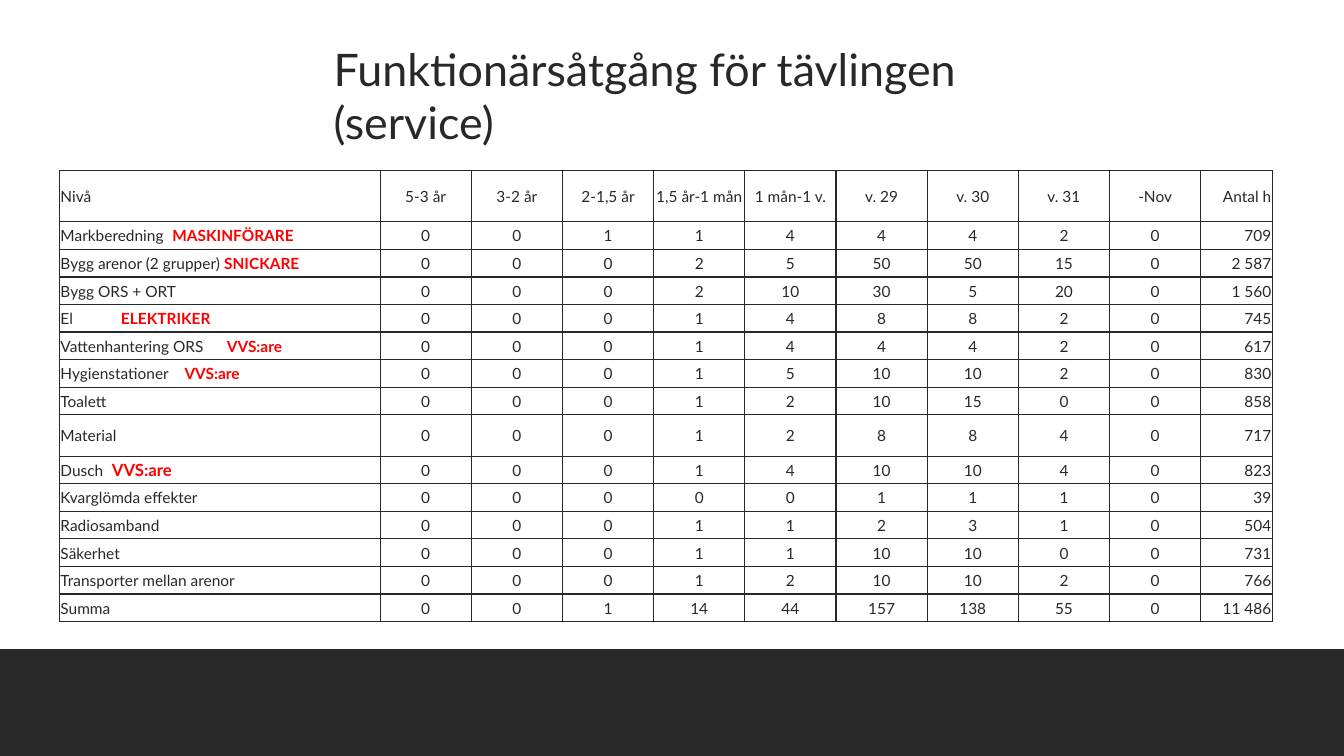
from lxml import etree
from pptx import Presentation
from pptx.dml.color import RGBColor
from pptx.enum.shapes import MSO_SHAPE
from pptx.enum.text import MSO_ANCHOR, PP_ALIGN
from pptx.oxml import parse_xml
from pptx.oxml.ns import nsdecls, qn
from pptx.util import Inches, Pt

RECTANGLE = MSO_SHAPE.RECTANGLE
TOP, MIDDLE = MSO_ANCHOR.TOP, MSO_ANCHOR.MIDDLE
LEFT, CENTER, RIGHT = PP_ALIGN.LEFT, PP_ALIGN.CENTER, PP_ALIGN.RIGHT

SLIDE_W, SLIDE_H = 13.33, 7.5
COLORS = {"ink": "282828", "trade": "FF0000"}
FONT = "Lato"

HEADER = ["Nivå", "5-3 år", "3-2 år", "2-1,5 år", "1,5 år-1 mån", "1 mån-1 v.",
          "v. 29", "v. 30", "v. 31", "-Nov", "Antal h"]
TASKS = [
    ["Markberedning", 0, 0, 1, 1, 4, 4, 4, 2, 0, "709"],
    ["Bygg arenor (2 grupper)", 0, 0, 0, 2, 5, 50, 50, 15, 0, "2 587"],
    ["Bygg ORS + ORT", 0, 0, 0, 2, 10, 30, 5, 20, 0, "1 560"],
    ["El", 0, 0, 0, 1, 4, 8, 8, 2, 0, "745"],
    ["Vattenhantering ORS", 0, 0, 0, 1, 4, 4, 4, 2, 0, "617"],
    ["Hygienstationer", 0, 0, 0, 1, 5, 10, 10, 2, 0, "830"],
    ["Toalett", 0, 0, 0, 1, 2, 10, 15, 0, 0, "858"],
    ["Material", 0, 0, 0, 1, 2, 8, 8, 4, 0, "717"],
    ["Dusch", 0, 0, 0, 1, 4, 10, 10, 4, 0, "823"],
    ["Kvarglömda effekter", 0, 0, 0, 0, 0, 1, 1, 1, 0, "39"],
    ["Radiosamband", 0, 0, 0, 1, 1, 2, 3, 1, 0, "504"],
    ["Säkerhet", 0, 0, 0, 1, 1, 10, 10, 0, 0, "731"],
    ["Transporter mellan arenor", 0, 0, 0, 1, 2, 10, 10, 2, 0, "766"],
    ["Summa", 0, 0, 1, 14, 44, 157, 138, 55, 0, "11 486"],
]
# Task: (trade needed, tab position in inches or None for a space, text size)
TRADES = {
    "Markberedning": ("MASKINFÖRARE", 1.11, 11),
    "Bygg arenor (2 grupper)": ("SNICKARE", None, 11),
    "El": ("ELEKTRIKER", 0.6, 11),
    "Vattenhantering ORS": ("VVS:are", 1.65, 11),
    "Hygienstationer": ("VVS:are", 1.23, 11),
    "Dusch": ("VVS:are", 0.51, 12),
}


def add_text(paragraph, text, size=11, color="ink", bold=False, align=LEFT):
    paragraph.alignment = align
    run = paragraph.add_run()
    run.text = text
    run.font.name = FONT
    run.font.size = Pt(size)
    run.font.bold = bold
    run.font.color.rgb = RGBColor.from_string(COLORS[color])


def add_tab_stop(paragraph, position):
    tabs = etree.SubElement(paragraph._p.get_or_add_pPr(), qn("a:tabLst"))
    etree.SubElement(tabs, qn("a:tab"), pos=str(Inches(position)), algn="l")


def style_cell(cell):
    cell.vertical_anchor = MIDDLE
    cell.margin_left = cell.margin_right = cell.margin_top = Inches(0.01)
    cell.margin_bottom = 0
    cell.fill.background()
    properties = cell._tc.get_or_add_tcPr()
    for index, side in enumerate("LRTB"):
        properties.insert(index, parse_xml(
            f'<a:ln{side} {nsdecls("a")} w="{Pt(1)}"><a:solidFill>'
            f'<a:srgbClr val="{COLORS["ink"]}"/></a:solidFill></a:ln{side}>'))


def add_footer_band(slide, left, top, width, height):
    band = slide.shapes.add_shape(RECTANGLE, *map(Inches, (left, top, width, height)))
    band.shadow.inherit = False
    band.fill.solid()
    band.fill.fore_color.rgb = RGBColor.from_string(COLORS["ink"])
    band.line.fill.background()


def add_title(slide, left, top, width, height):
    frame = slide.shapes.add_textbox(*map(Inches, (left, top, width, height))).text_frame
    frame.word_wrap = True
    frame.vertical_anchor = TOP
    frame.margin_left = frame.margin_right = frame.margin_top = frame.margin_bottom = 0
    add_text(frame.paragraphs[0], "Funktionärsåtgång för tävlingen (service)", size=32)


def add_staffing_table(slide, left, top, width, height):
    rows = [HEADER] + TASKS
    last = len(HEADER) - 1
    table = slide.shapes.add_table(
        len(rows), len(HEADER), *map(Inches, (left, top, width, height))).table
    table.first_row = table.horz_banding = False

    # The periods share the width left by the first and last column
    task_w, hours_w = 3.18, 0.71
    period_w = (width - task_w - hours_w) / (last - 1)
    for column, column_w in zip(table.columns, [task_w] + [period_w] * (last - 1) + [hours_w]):
        column.width = Inches(column_w)

    # Ordinary rows share the height left by the two tall ones
    tall_rows = {"Nivå": 0.51, "Material": 0.41}
    row_h = (height - sum(tall_rows.values())) / (len(rows) - len(tall_rows))

    for r, values in enumerate(rows):
        task = values[0]
        table.rows[r].height = Inches(tall_rows.get(task, row_h))
        for c, value in enumerate(values):
            cell = table.cell(r, c)
            style_cell(cell)
            paragraph = cell.text_frame.paragraphs[0]
            align = {0: LEFT, last: RIGHT}.get(c, CENTER)
            if c == 0 and task in TRADES:
                trade, tab, size = TRADES[task]
                if tab:
                    add_tab_stop(paragraph, tab)
                add_text(paragraph, task + ("\t" if tab else " "))
                add_text(paragraph, trade, size=size, color="trade", bold=True)
            else:
                add_text(paragraph, str(value), align=align)


def main():
    deck = Presentation()
    deck.slide_width, deck.slide_height = Inches(SLIDE_W), Inches(SLIDE_H)
    slide = deck.slides.add_slide(deck.slide_layouts[6])
    add_footer_band(slide, 0, 6.44, SLIDE_W, SLIDE_H - 6.44)
    add_title(slide, 3.31, 0.41, 7.38, 0.54)
    add_staffing_table(slide, 0.59, 1.69, 12.03, 4.48)
    deck.save("out.pptx")


if __name__ == "__main__":
    main()
